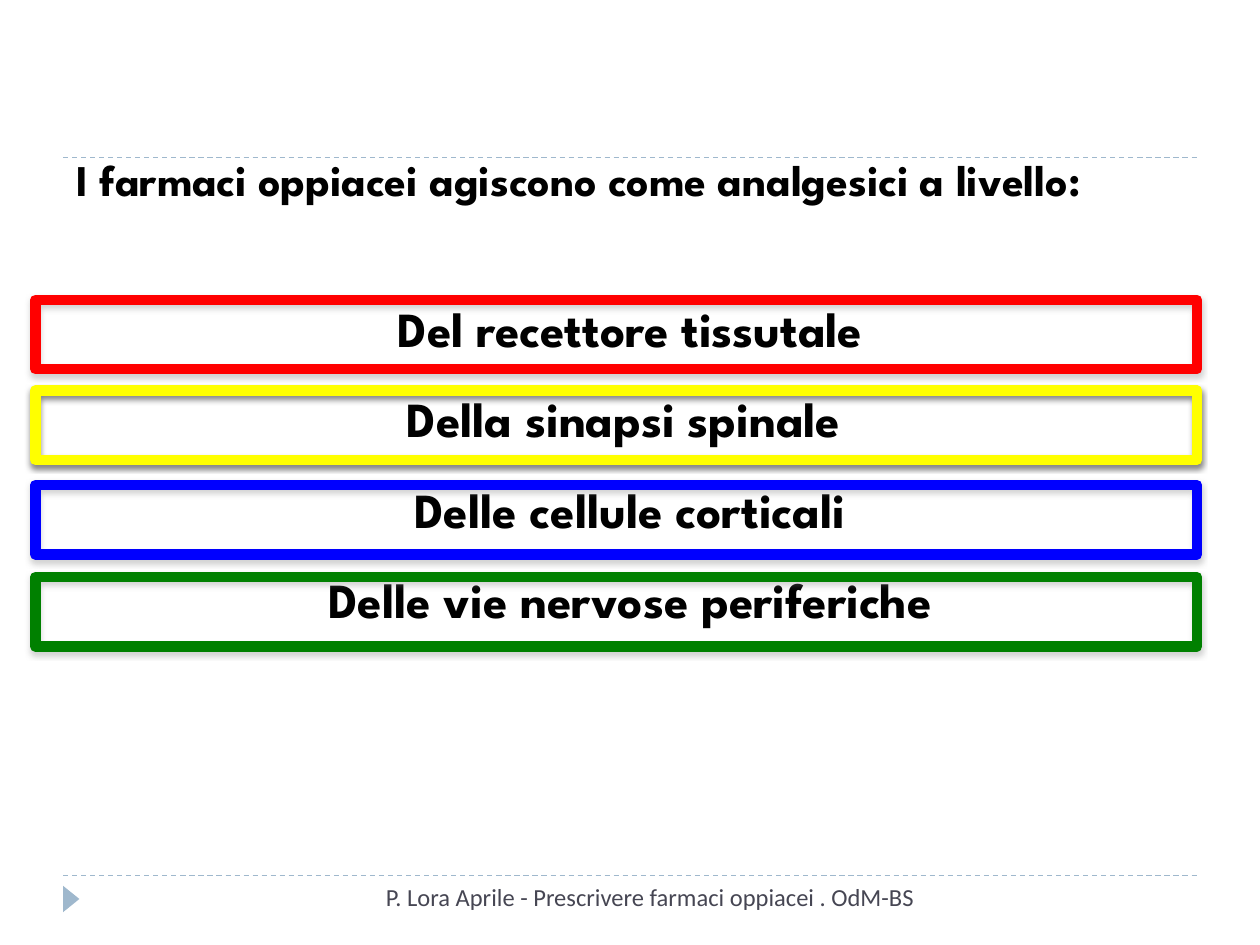
from lxml import etree
from pptx import Presentation
from pptx.dml.color import RGBColor
from pptx.enum.dml import MSO_LINE
from pptx.enum.shapes import MSO_CONNECTOR, MSO_SHAPE
from pptx.enum.text import MSO_ANCHOR, PP_ALIGN
from pptx.oxml.ns import qn
from pptx.util import Inches, Pt

DASH = MSO_LINE.DASH
STRAIGHT = MSO_CONNECTOR.STRAIGHT
RECT, TRIANGLE = MSO_SHAPE.RECTANGLE, MSO_SHAPE.ISOSCELES_TRIANGLE
TOP, BOTTOM = MSO_ANCHOR.TOP, MSO_ANCHOR.BOTTOM
LEFT, CENTER = PP_ALIGN.LEFT, PP_ALIGN.CENTER

BLACK = RGBColor(0, 0, 0)
SLATE = RGBColor(0x46, 0x46, 0x53)
STEEL = RGBColor(0x9F, 0xB8, 0xCD)
RED = RGBColor(0xFF, 0, 0)
YELLOW = RGBColor(0xFF, 0xFF, 0)
BLUE = RGBColor(0, 0, 0xFF)
GREEN = RGBColor(0, 0x80, 0)

HEAD, PLAIN = "League Spartan", "Calibri"

# Frame top, frame colour, shadow opacity in percent, label
LEVELS = [
    (2.38, RED, 35, "Del recettore tissutale"),
    (3.1, YELLOW, 95, "Della sinapsi spinale "),
    (3.85, BLUE, 35, "Delle cellule corticali"),
    (4.58, GREEN, 35, "Delle vie nervose periferiche"),
]


def add_shadow(effects, color, alpha, blur, dist, angle):
    outer = etree.SubElement(
        effects, qn("a:outerShdw"), blurRad=str(Pt(blur)), dist=str(Pt(dist)),
        dir=str(angle * 60000), algn="ctr", rotWithShape="0")
    tint = etree.SubElement(outer, qn("a:srgbClr"), val=color)
    etree.SubElement(tint, qn("a:alpha"), val=str(alpha * 1000))


def add_text(slide, box, lines, size, font, color, bold, align, anchor=TOP):
    frame = slide.shapes.add_textbox(*map(Inches, box)).text_frame
    frame.word_wrap = True
    frame.vertical_anchor = anchor
    frame.text = "\n".join(lines)
    for para in frame.paragraphs:
        para.alignment = align
        para.font.size = Pt(size)
        para.font.name = font
        para.font.bold = bold
        para.font.color.rgb = color
    return frame


def add_rule(slide, left, top, width):
    rule = slide.shapes.add_connector(
        STRAIGHT, Inches(left), Inches(top), Inches(left + width), Inches(top))
    rule.line.color.rgb = STEEL
    rule.line.width = Pt(0.75)
    rule.line.dash_style = DASH
    etree.SubElement(rule._element.spPr, qn("a:effectLst"))


def add_title(slide, left, top, width, height):
    add_rule(slide, left, top + 0.65, width)
    frame = add_text(slide, (left + 0.01, top, width, height),
                     ["I farmaci oppiacei agiscono come analgesici a livello:"],
                     25, HEAD, BLACK, True, LEFT, BOTTOM)
    props = frame.paragraphs[0].runs[0]._r.get_or_add_rPr()
    add_shadow(etree.SubElement(props, qn("a:effectLst")),
               "000000", 40, 3, 4, 45)


def add_levels(slide, left, top, width, height):
    # Labels
    frame = add_text(slide, (left, top, width, height),
                     [level[3] for level in LEVELS],
                     28, HEAD, BLACK, True, CENTER)
    for para in frame.paragraphs:
        para.space_before, para.space_after = Pt(6), Pt(12)
        props = para._p.get_or_add_pPr()
        props.set("marL", str(Inches(0.3)))
        props.set("indent", str(-Inches(0.3)))
    # Coloured frames
    for y, color, alpha, _ in LEVELS:
        rect = slide.shapes.add_shape(
            RECT, Inches(left - 0.22), Inches(y),
            Inches(width + 0.22), Inches(0.55))
        rect.fill.background()
        rect.line.color.rgb = color
        rect.line.width = Pt(6)
        rect.shadow.inherit = False
        add_shadow(rect._element.spPr.find(qn("a:effectLst")),
                   "808080", alpha, 3.1, 1.8, 90)


def add_footer(slide, left, top, width, height):
    add_rule(slide, left, top, width)
    mark = slide.shapes.add_shape(
        TRIANGLE, Inches(left - 0.04), Inches(top + 0.12),
        Inches(0.21), Inches(0.13))
    mark.rotation = 90
    mark.fill.solid()
    mark.fill.fore_color.rgb = STEEL
    mark.line.fill.background()
    mark.shadow.inherit = False
    add_text(slide, (left + 2.3, top, 4.72, height),
             ["P. Lora Aprile - Prescrivere farmaci oppiacei . OdM-BS"],
             14, PLAIN, SLATE, False, CENTER)


def main():
    deck = Presentation()
    deck.slide_width, deck.slide_height = Inches(10), Inches(7.5)
    slide = deck.slides.add_slide(deck.slide_layouts[6])
    add_title(slide, 0.5, 0.6, 9, 1.08)
    add_levels(slide, 0.5, 2.32, 9, 4.95)
    add_footer(slide, 0.5, 6.95, 9, 0.4)
    deck.save("out.pptx")


if __name__ == "__main__":
    main()
